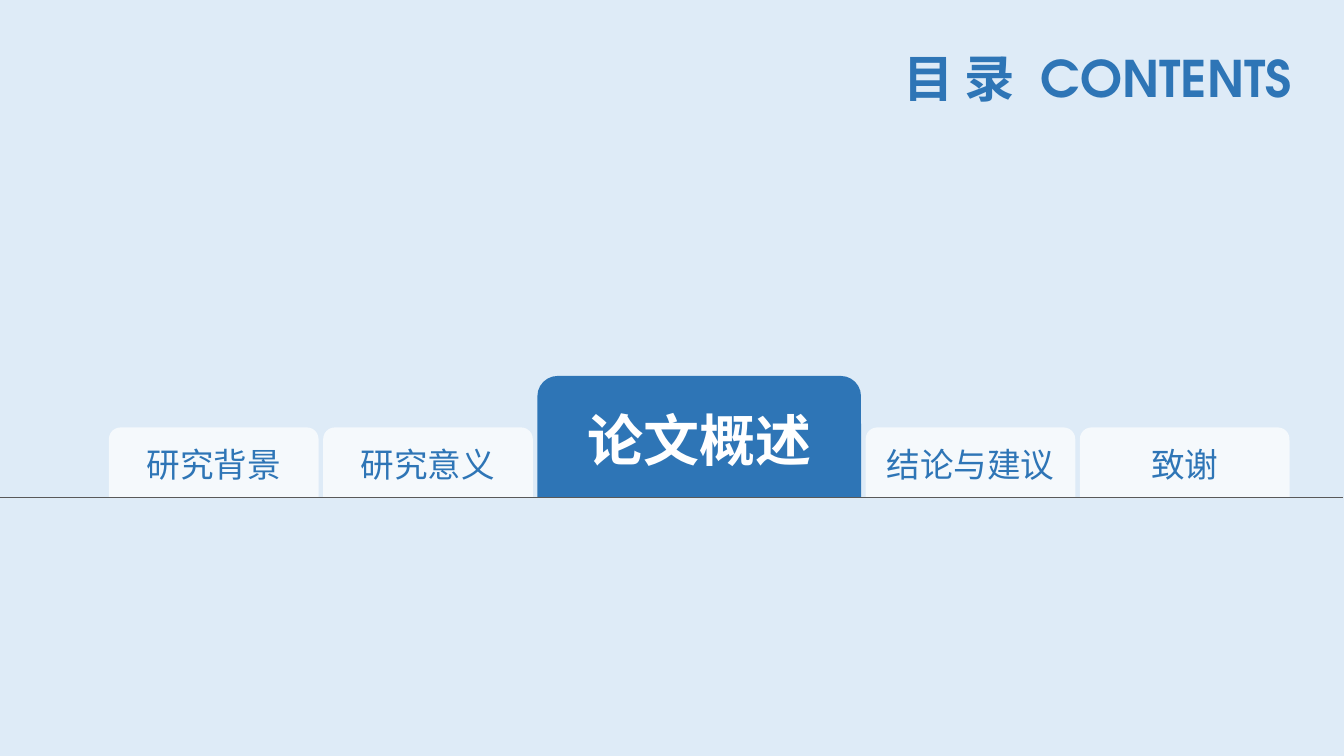
"""Build a contents slide with five section tabs, the third one active."""
from pptx import Presentation
from pptx.dml.color import RGBColor
from pptx.enum.shapes import MSO_CONNECTOR, MSO_SHAPE
from pptx.enum.text import MSO_ANCHOR, MSO_AUTO_SIZE, PP_ALIGN
from pptx.oxml.ns import qn
from pptx.util import Inches, Pt
from lxml.etree import SubElement

BACKGROUND = RGBColor(0xDE, 0xEB, 0xF7)
BLUE = RGBColor(0x2E, 0x75, 0xB6)
WHITE = RGBColor(0xFF, 0xFF, 0xFF)
GRAY = RGBColor(0x59, 0x59, 0x59)
FONT = "TeX Gyre Adventor"
BASELINE = 4.93


def write_text(paragraph, text, size=24, color=BLUE, bold=False, spacing=0):
    paragraph.alignment = PP_ALIGN.CENTER
    run = paragraph.add_run()
    run.text = text
    run.font.name = FONT
    run.font.size = Pt(size)
    run.font.bold = bold
    run.font.color.rgb = color
    if spacing:
        run.font._element.set("spc", str(spacing * 100))


presentation = Presentation()
presentation.slide_width = Inches(13.33)
presentation.slide_height = Inches(7.5)
slide = presentation.slides.add_slide(presentation.slide_layouts[5])
slide.background.fill.solid()
slide.background.fill.fore_color.rgb = BACKGROUND

title = slide.shapes.title
title.left, title.top = Inches(8.66), Inches(0.42)
title.width, title.height = Inches(4.45), Inches(0.7)
title_frame = title.text_frame
title_frame.word_wrap = False
title_frame.auto_size = MSO_AUTO_SIZE.SHAPE_TO_FIT_TEXT
title_frame.vertical_anchor = MSO_ANCHOR.TOP
for text, spacing in [("目 录", 0), (" ", 10), ("CONTENTS", 0)]:
    write_text(title_frame.paragraphs[0], text, size=36, bold=True, spacing=spacing)

left = 1.08
for label in ["研究背景", "研究意义", "论文概述", "结论与建议", "致谢"]:
    active = label == "论文概述"
    width, height = (3.21, 1.2) if active else (2.08, 0.69)
    tab = slide.shapes.add_shape(
        MSO_SHAPE.ROUND_2_SAME_RECTANGLE,
        Inches(left), Inches(BASELINE - height), Inches(width), Inches(height))
    tab.shadow.inherit = False
    tab.line.fill.background()
    tab.fill.solid()
    tab.fill.fore_color.rgb = BLUE if active else WHITE
    frame = tab.text_frame
    frame.word_wrap = True
    frame.vertical_anchor = MSO_ANCHOR.MIDDLE
    if active:
        frame.margin_left = frame.margin_right = 0
        write_text(frame.paragraphs[0], label, size=40, color=WHITE, bold=True)
    else:
        color_element = tab._element.spPr.find(qn("a:solidFill"))[0]
        SubElement(color_element, qn("a:alpha"), val="70000")
        write_text(frame.paragraphs[0], label)
    left += width + 0.045

baseline = slide.shapes.add_connector(
    MSO_CONNECTOR.STRAIGHT,
    Inches(-0.02), Inches(BASELINE), Inches(13.32), Inches(BASELINE))
baseline.line.color.rgb = GRAY
baseline.line.width = Pt(0.5)
SubElement(baseline._element.spPr, qn("a:effectLst"))

presentation.save("out.pptx")
